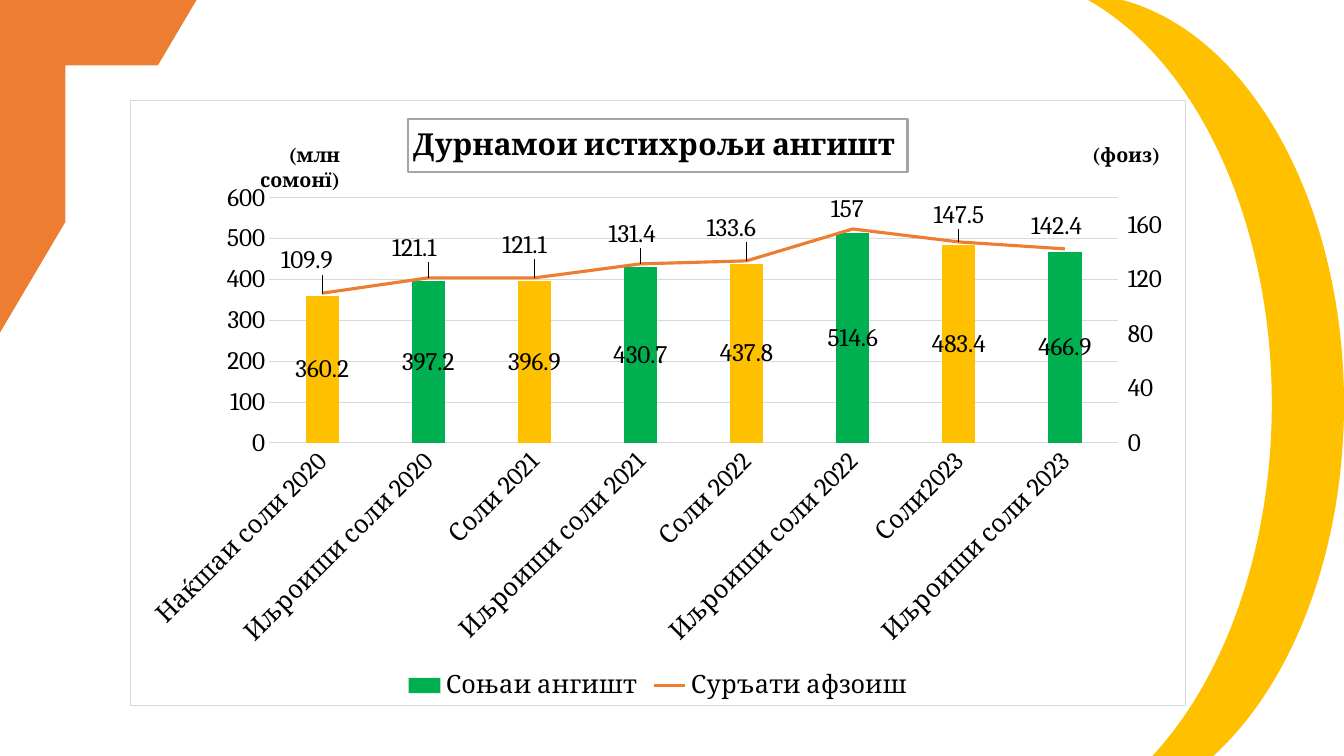
from copy import deepcopy

from lxml import etree
from pptx import Presentation
from pptx.chart.axis import ValueAxis
from pptx.chart.data import CategoryChartData
from pptx.dml.color import RGBColor
from pptx.enum.chart import XL_CHART_TYPE, XL_LABEL_POSITION, XL_LEGEND_POSITION, XL_TICK_MARK
from pptx.enum.shapes import MSO_SHAPE
from pptx.enum.text import MSO_AUTO_SIZE, PP_ALIGN
from pptx.oxml import parse_xml
from pptx.oxml.ns import qn
from pptx.util import Pt

COLUMNS = XL_CHART_TYPE.COLUMN_CLUSTERED
CENTER, ABOVE = XL_LABEL_POSITION.CENTER, XL_LABEL_POSITION.ABOVE
BOTTOM = XL_LEGEND_POSITION.BOTTOM
TICK_NONE, TICK_OUT = XL_TICK_MARK.NONE, XL_TICK_MARK.OUTSIDE
HALF_FRAME, MOON = MSO_SHAPE.HALF_FRAME, MSO_SHAPE.MOON
RIGHT, GROW = PP_ALIGN.RIGHT, MSO_AUTO_SIZE.SHAPE_TO_FIT_TEXT

FONT = "Cambria"
BLACK, GREEN, YELLOW, ORANGE = "000000", "00B050", "FFC000", "ED7D31"
PALE_GRAY, GRAY = "D9D9D9", "A5A5A5"
CHART_NS = "http://schemas.openxmlformats.org/drawingml/2006/chart"
DRAWING_NS = "http://schemas.openxmlformats.org/drawingml/2006/main"

TITLE = "Дурнамои истихрољи ангишт "
COAL_NAME, GROWTH_NAME = "Соњаи ангишт", "Суръати афзоиш"
# category, coal value, growth rate, shift of the growth label (right, down)
YEARS = [
    ("Наќшаи соли 2020", 360.2, 109.9, (-11, -10)),
    ("Иљроиши соли 2020", 397.2, 121.1, (-10, -8)),
    ("Соли 2021", 396.9, 121.1, (-7, -10)),
    ("Иљроиши соли 2021", 430.7, 131.4, (-6, -8)),
    ("Соли 2022", 437.8, 133.6, (-11, -10)),
    ("Иљроиши соли 2022", 514.6, 157, (-4, -1)),
    ("Соли2023", 483.4, 147.5, (0, -6)),
    ("Иљроиши соли 2023", 466.9, 142.4, (-6, -3)),
]
UNITS = [("(млн сомонї)", 144), ("(фоиз)", 730)]
UNIT_TOP, UNIT_WIDTH, UNIT_HEIGHT = 97.2, 106, 25

CHART_BOX = (93, 71.5, 754, 432.7)
PLOT_BOX = (99, 69.5, 607, 175.5)
TITLE_PLACE = (198, 13)
FRAME_BOX = (0, 0, 140.4, 237.6)
MOON_BOX = (769, -4.3, 191, 585.4)


def color(hex_text):
    return RGBColor.from_string(hex_text)


def style_font(font, size, bold=False):
    font.name, font.size, font.bold = FONT, Pt(size), bold
    font.color.rgb = color(BLACK)


def style_line(line, hex_text, width):
    line.color.rgb = color(hex_text)
    line.width = Pt(width)


def place(parent, index, box, absolute=True):
    """Give a chart part a manual layout; box is in points of the chart area."""
    for old in parent.findall(qn("c:layout")):
        parent.remove(old)
    layout = etree.Element(qn("c:layout"))
    manual = etree.SubElement(layout, qn("c:manualLayout"))
    settings = []
    if len(box) == 4:
        settings.append(("layoutTarget", "inner"))
    if absolute:
        settings += [("xMode", "edge"), ("yMode", "edge")]
    scale = CHART_BOX[2:] * 2
    settings += [(name, f"{part / whole:.4f}") for name, part, whole in zip("xywh", box, scale)]
    for name, value in settings:
        etree.SubElement(manual, qn("c:" + name)).set("val", value)
    parent.insert(index, layout)


def add_growth_line(chart):
    """Move the second series to a line on its own right-hand axis."""
    plot_area = chart.plots[0]._element.getparent()
    growth = chart.plots[0].series[1]._element
    for unwanted in growth.findall(qn("c:invertIfNegative")):
        growth.remove(unwanted)
    line_chart = parse_xml(
        f'<c:lineChart xmlns:c="{CHART_NS}"><c:grouping val="standard"/>'
        '<c:varyColors val="0"/><c:marker val="1"/>'
        '<c:axId val="501"/><c:axId val="502"/></c:lineChart>')
    line_chart.insert(2, growth)
    chart.plots[0]._element.addnext(line_chart)

    category = deepcopy(chart.category_axis._element)
    value = deepcopy(chart.value_axis._element)
    chart.value_axis._element.addnext(value)
    value.addnext(category)
    for axis, own, other in ((category, "501", "502"), (value, "502", "501")):
        axis.find(qn("c:axId")).set("val", own)
        axis.find(qn("c:crossAx")).set("val", other)
    category.find(qn("c:delete")).set("val", "1")
    value.find(qn("c:axPos")).set("val", "r")
    value.find(qn("c:crosses")).set("val", "max")
    right = ValueAxis(value)
    right.has_major_gridlines = False
    right.major_tick_mark = TICK_OUT
    right.maximum_scale, right.major_unit = 180, 40
    place(plot_area, 0, PLOT_BOX)


def style_axes(chart):
    years, coal = chart.category_axis, chart.value_axis
    for axis in (years, coal):
        axis.major_tick_mark = TICK_NONE
        style_font(axis.tick_labels.font, 18)
    style_line(years.format.line, PALE_GRAY, 0.75)
    years._element.find(qn("c:txPr")).find(qn("a:bodyPr")).set("rot", "-2700000")
    coal.format.line.fill.background()
    style_line(coal.major_gridlines.format.line, PALE_GRAY, 0.75)
    coal.minimum_scale, coal.maximum_scale, coal.major_unit = 0, 600, 100


def style_series(chart):
    columns, line = chart.plots
    columns.gap_width, columns.overlap = 219, -27
    columns.vary_by_categories = False
    coal, growth = columns.series[0], line.series[0]
    coal.format.fill.solid()
    coal.format.fill.fore_color.rgb = color(GREEN)
    for index in range(0, len(YEARS), 2):
        fill = coal.points[index].format.fill
        fill.solid()
        fill.fore_color.rgb = color(YELLOW)
    coal.data_labels.show_value = True
    coal.data_labels.position = CENTER
    style_font(coal.data_labels.font, 18)

    style_line(growth.format.line, ORANGE, 2.25)
    growth.smooth = False
    growth.marker.style = None
    marker = growth.marker._element.find(qn("c:marker"))
    if marker is None:
        marker = growth._element.get_or_add_marker()
    marker.insert(0, parse_xml(f'<c:symbol xmlns:c="{CHART_NS}" val="none"/>'))
    for index, year in enumerate(YEARS):
        label = growth.points[index].data_label
        style_font(label.font, 18)
        label.position = ABOVE
    for label, year in zip(growth._element.iter(qn("c:dLbl")), YEARS):
        place(label, 1, year[3], absolute=False)


def add_coal_chart(page):
    data = CategoryChartData()
    data.categories = [year[0] for year in YEARS]
    data.add_series(COAL_NAME, [year[1] for year in YEARS])
    data.add_series(GROWTH_NAME, [year[2] for year in YEARS])
    chart = page.shapes.add_chart(COLUMNS, *map(Pt, CHART_BOX), data).chart
    style_font(chart.font, 18)
    style_axes(chart)
    add_growth_line(chart)
    style_series(chart)

    chart.has_title = True
    title = chart.chart_title
    span = title.text_frame.paragraphs[0].add_run()
    span.text = TITLE
    style_font(span.font, 21.6, bold=True)
    style_line(title.format.line, GRAY, 1.5)
    place(title._element, 1, TITLE_PLACE)

    chart.has_legend = True
    chart.legend.position = BOTTOM
    chart.legend.include_in_layout = False
    style_font(chart.legend.font, 18)
    chart._chartSpace.find(qn("c:chart")).addnext(parse_xml(
        f'<c:spPr xmlns:c="{CHART_NS}" xmlns:a="{DRAWING_NS}"><a:noFill/>'
        f'<a:ln w="{Pt(0.75)}"><a:solidFill><a:srgbClr val="{PALE_GRAY}"/>'
        '</a:solidFill></a:ln></c:spPr>'))


def add_ornament(page, kind, bounds, fill):
    shape = page.shapes.add_shape(kind, *map(Pt, bounds))
    shape.shadow.inherit = False
    shape.fill.solid()
    shape.fill.fore_color.rgb = color(fill)
    shape.line.fill.background()
    return shape


def add_unit(page, text, left):
    box = page.shapes.add_textbox(Pt(left), Pt(UNIT_TOP), Pt(UNIT_WIDTH), Pt(UNIT_HEIGHT))
    box.text_frame.word_wrap = True
    box.text_frame.auto_size = GROW
    para = box.text_frame.paragraphs[0]
    para.alignment, para.line_spacing = RIGHT, 1.07
    span = para.add_run()
    span.text = text
    style_font(span.font, 14, bold=True)


def main():
    deck = Presentation()
    deck.slide_width, deck.slide_height = Pt(960), Pt(540)
    page = deck.slides.add_slide(deck.slide_layouts[6])
    add_coal_chart(page)
    add_ornament(page, HALF_FRAME, FRAME_BOX, ORANGE)
    moon = add_ornament(page, MOON, MOON_BOX, YELLOW)
    moon.rotation = 180
    moon.adjustments[0] = 0.27
    for text, left in UNITS:
        add_unit(page, text, left)
    deck.save("out.pptx")


if __name__ == "__main__":
    main()
